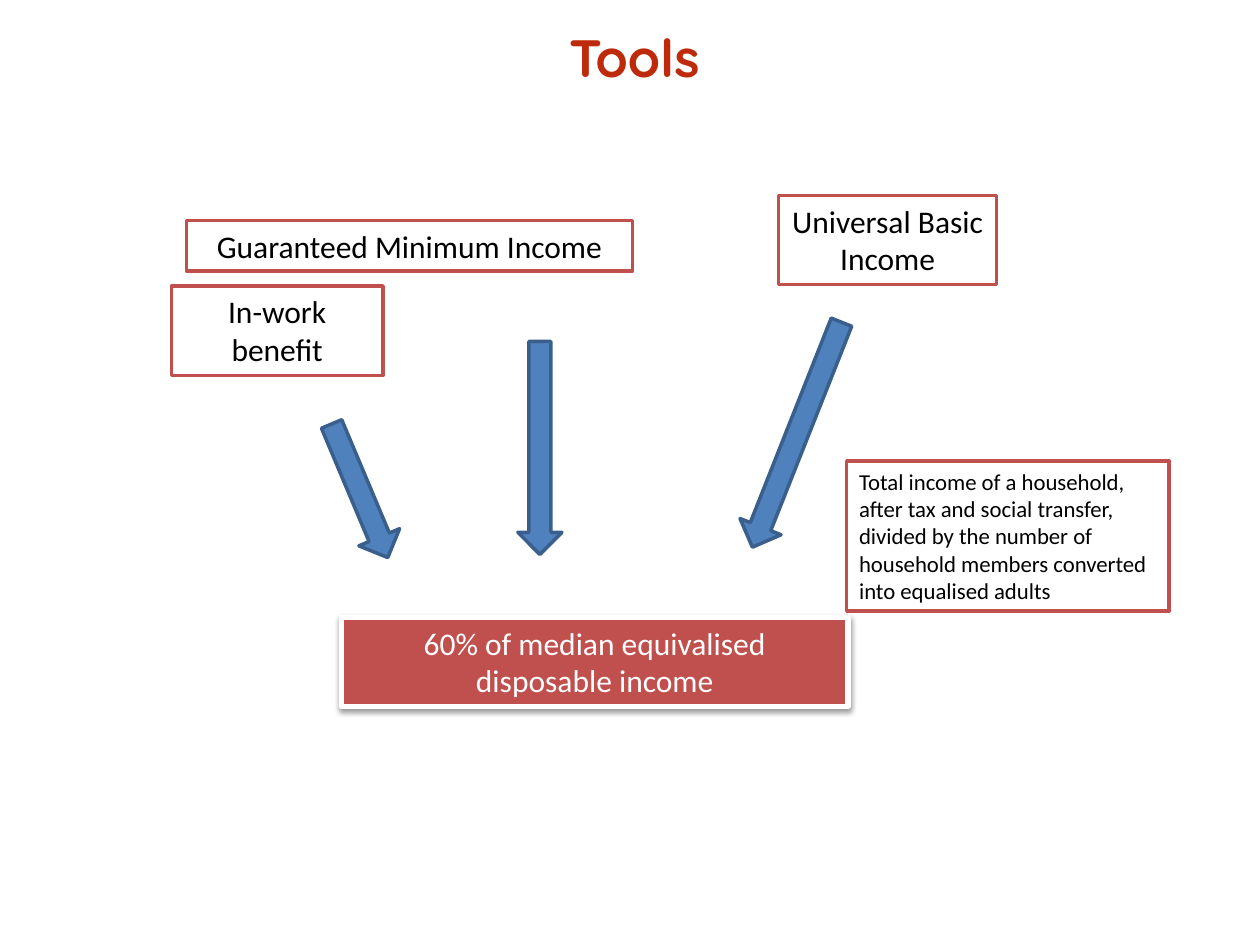
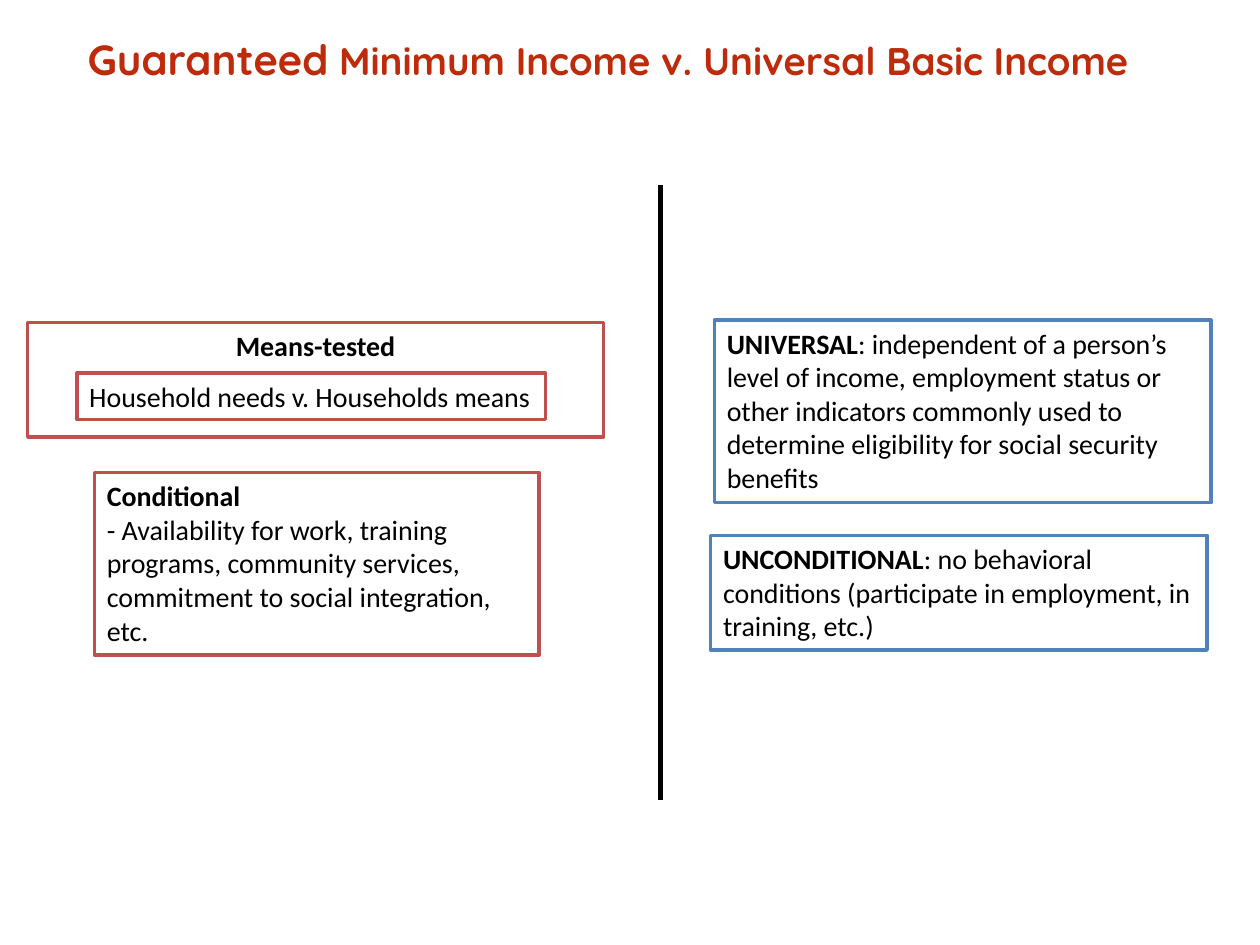
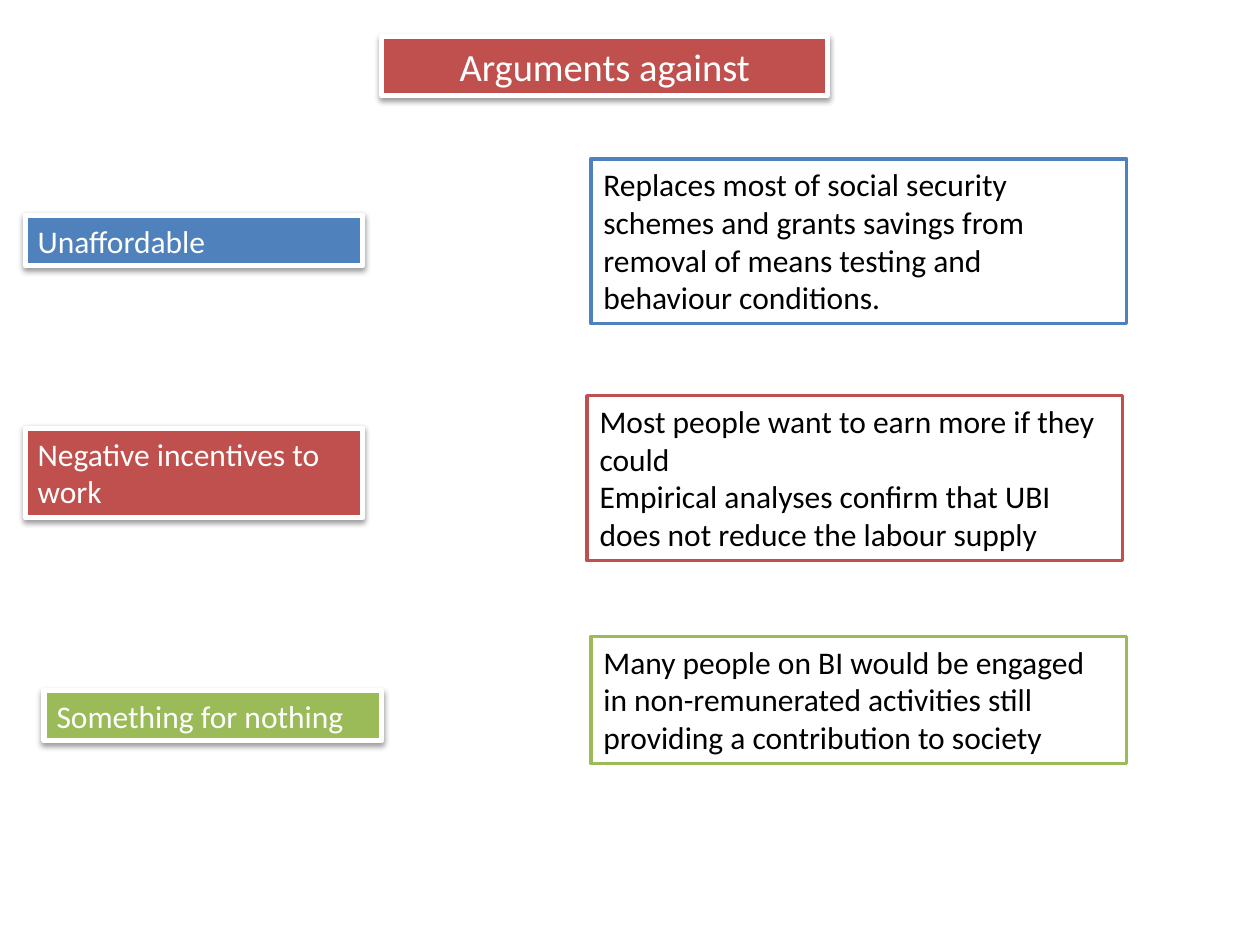
from lxml import etree
from pptx import Presentation
from pptx.dml.color import RGBColor
from pptx.enum.shapes import MSO_CONNECTOR, MSO_SHAPE
from pptx.enum.text import MSO_ANCHOR, MSO_AUTO_SIZE, PP_ALIGN
from pptx.oxml.ns import qn
from pptx.util import Inches, Pt

RED = RGBColor(0xC0, 0x50, 0x4D)
BLUE = RGBColor(0x4F, 0x81, 0xBD)
GREEN = RGBColor(0x9B, 0xBB, 0x59)
ARROW_EDGE = RGBColor(0x3A, 0x5F, 0x8C)
TITLE_RED = RGBColor(0xBD, 0x2B, 0x0B)
WHITE = RGBColor(0xFF, 0xFF, 0xFF)
BLACK = RGBColor(0x00, 0x00, 0x00)

LEFT, CENTER = PP_ALIGN.LEFT, PP_ALIGN.CENTER
TOP = MSO_ANCHOR.TOP
FIXED, GROW = MSO_AUTO_SIZE.NONE, MSO_AUTO_SIZE.SHAPE_TO_FIT_TEXT
RECTANGLE = MSO_SHAPE.RECTANGLE
DOWN_ARROW, LEFT_ARROW = MSO_SHAPE.DOWN_ARROW, MSO_SHAPE.LEFT_ARROW
STRAIGHT = MSO_CONNECTOR.STRAIGHT

BLANK_LAYOUT = 6
BODY_FONT, TITLE_FONT = "Calibri", "Quicksand"


def add_span(para, text, size=18, color=BLACK, bold=False, font=BODY_FONT):
    span = para.add_run()
    span.text = text
    span.font.name = font
    span.font.size = Pt(size)
    span.font.bold = bold
    span.font.color.rgb = color


def add_drop_shadow(shape):
    effects = shape._element.spPr.find(qn("a:effectLst"))
    shadow = etree.SubElement(effects, qn("a:outerShdw"), blurRad="40000",
                              dist="20000", dir="5400000", rotWithShape="0")
    color = etree.SubElement(shadow, qn("a:srgbClr"), val=str(BLACK))
    etree.SubElement(color, qn("a:alpha"), val="38000")


class Deck:
    """Holds the presentation, its style and the current page."""

    def __init__(self):
        self.deck = Presentation()
        self.deck.slide_width = Inches(10)
        self.deck.slide_height = Inches(7.5)
        self.page = None

    def new_page(self):
        layout = self.deck.slide_layouts[BLANK_LAYOUT]
        self.page = self.deck.slides.add_slide(layout)

    def title(self, left, top, spans):
        box = self.page.shapes.add_textbox(
            Inches(left), Inches(top), Inches(9.21), Inches(0.71))
        box.text_frame.word_wrap = True
        para = box.text_frame.paragraphs[0]
        para.alignment = CENTER
        para.line_spacing = Pt(22)
        for text, size in spans:
            add_span(para, text, size=size, color=TITLE_RED, bold=True, font=TITLE_FONT)

    def shape(self, kind, place, fill, edge, edge_width):
        shape = self.page.shapes.add_shape(kind, *map(Inches, place))
        shape.shadow.inherit = False
        shape.fill.solid()
        shape.fill.fore_color.rgb = fill
        shape.line.color.rgb = edge
        shape.line.width = Pt(edge_width)
        return shape

    def fill_text(self, box, paragraphs, align, color, size, fit=GROW):
        """Each paragraph is plain text or a (bold lead, plain rest) pair."""
        frame = box.text_frame
        frame.word_wrap = True
        frame.auto_size = fit
        frame.vertical_anchor = TOP
        for index, content in enumerate(paragraphs):
            para = frame.add_paragraph() if index else frame.paragraphs[0]
            para.alignment = align
            lead, rest = ("", content) if isinstance(content, str) else content
            for text, bold in ((lead, True), (rest, False)):
                if text:
                    add_span(para, text, size=size, color=color, bold=bold)

    def outlined_box(self, place, *paragraphs, edge=RED, align=LEFT, size=18, fit=GROW):
        box = self.shape(RECTANGLE, place, WHITE, edge, 2)
        self.fill_text(box, paragraphs, align, BLACK, size, fit)

    def filled_box(self, place, text, fill=RED, align=LEFT, size=18):
        box = self.shape(RECTANGLE, place, fill, WHITE, 3)
        add_drop_shadow(box)
        self.fill_text(box, [text], align, WHITE, size)

    def arrow(self, kind, place, rotation=0):
        self.shape(kind, place, BLUE, ARROW_EDGE, 2).rotation = rotation

    def vertical_line(self, x, top, bottom):
        line = self.page.shapes.add_connector(
            STRAIGHT, Inches(x), Inches(top), Inches(x), Inches(bottom))
        line.line.color.rgb = BLACK
        line.line.width = Pt(2.75)
        etree.SubElement(line._element.spPr, qn("a:effectLst"))


def build_tools(deck):
    deck.new_page()
    deck.title(0.43, 0.34, [("Tools", 30)])
    # Target income
    deck.filled_box((2.71, 4.9, 4.02, 0.71),
                    "60% of median equivalised disposable income", align=CENTER)
    # Tools leading to it
    deck.outlined_box((1.36, 2.27, 1.68, 0.71), "In-work benefit", align=CENTER)
    deck.outlined_box((6.18, 1.55, 1.73, 0.71), "Universal Basic Income", align=CENTER)
    deck.arrow(LEFT_ARROW, (2.28, 3.72, 1.15, 0.35), rotation=247.2)
    deck.arrow(DOWN_ARROW, (4.11, 2.71, 0.35, 1.69))
    deck.arrow(DOWN_ARROW, (6.15, 2.49, 0.35, 1.92), rotation=21.6)
    deck.outlined_box((1.48, 1.75, 3.54, 0.4), "Guaranteed Minimum Income", align=CENTER)
    # Definition
    deck.outlined_box((6.72, 3.66, 2.56, 1.19),
                      "Total income of a household, after tax and social transfer, "
                      "divided by the number of household members converted into "
                      "equalised adults", size=13)


def build_comparison(deck):
    deck.new_page()
    # Guaranteed minimum income
    deck.outlined_box((0.22, 2.56, 4.57, 0.91), ("Means-tested", ""),
                      align=CENTER, size=16, fit=FIXED)
    deck.title(0.22, 0.31, [("Guaranteed", 24),
                            (" Minimum Income v. Universal Basic Income", 22)])
    deck.outlined_box((0.75, 3.75, 3.53, 1.45), ("Conditional", ""),
                      "- Availability for work, training programs, community services,",
                      "commitment to social integration, etc.", size=16)
    deck.outlined_box((0.61, 2.96, 3.72, 0.37),
                      "Household needs v. Households means", size=16)
    # Universal basic income
    deck.outlined_box((5.67, 2.54, 3.94, 1.45),
                      ("UNIVERSAL", ": independent of a person’s level of income, "
                       "employment status or other indicators commonly used to "
                       "determine eligibility for social security benefits"),
                      edge=BLUE, size=16)
    deck.outlined_box((5.64, 4.25, 3.94, 0.91),
                      ("UNCONDITIONAL", ": no behavioral conditions (participate in "
                       "employment, in training, etc.)"), edge=BLUE, size=16)
    # Divider
    deck.vertical_line(5.24, 1.47, 6.35)


def build_arguments(deck):
    deck.new_page()
    deck.filled_box((3.03, 0.29, 3.54, 0.47), "Arguments against", align=CENTER, size=22)
    # Each argument on the left, its reply on the right
    rows = [
        (BLUE, (0.2, 1.71, 2.68, 0.4), "Unaffordable", (4.69, 1.26, 4.25, 1.31),
         ["Replaces most of social security schemes and grants savings from "
          "removal of means testing and behaviour conditions."]),
        (RED, (0.2, 3.4, 2.68, 0.71), "Negative incentives to work",
         (4.66, 3.14, 4.25, 1.31),
         ["Most people want to earn more if they could",
          "Empirical analyses confirm that UBI does not reduce the labour supply"]),
        (GREEN, (0.35, 5.48, 2.68, 0.4), "Something for nothing",
         (4.69, 5.05, 4.25, 1.01),
         ["Many people on BI would be engaged in non-remunerated activities "
          "still providing a contribution to society"]),
    ]
    for color, argument_place, argument, reply_place, reply in rows:
        deck.filled_box(argument_place, argument, fill=color)
        deck.outlined_box(reply_place, *reply, edge=color)


def main():
    deck = Deck()
    build_tools(deck)
    build_comparison(deck)
    build_arguments(deck)
    deck.deck.save("out.pptx")


if __name__ == "__main__":
    main()
